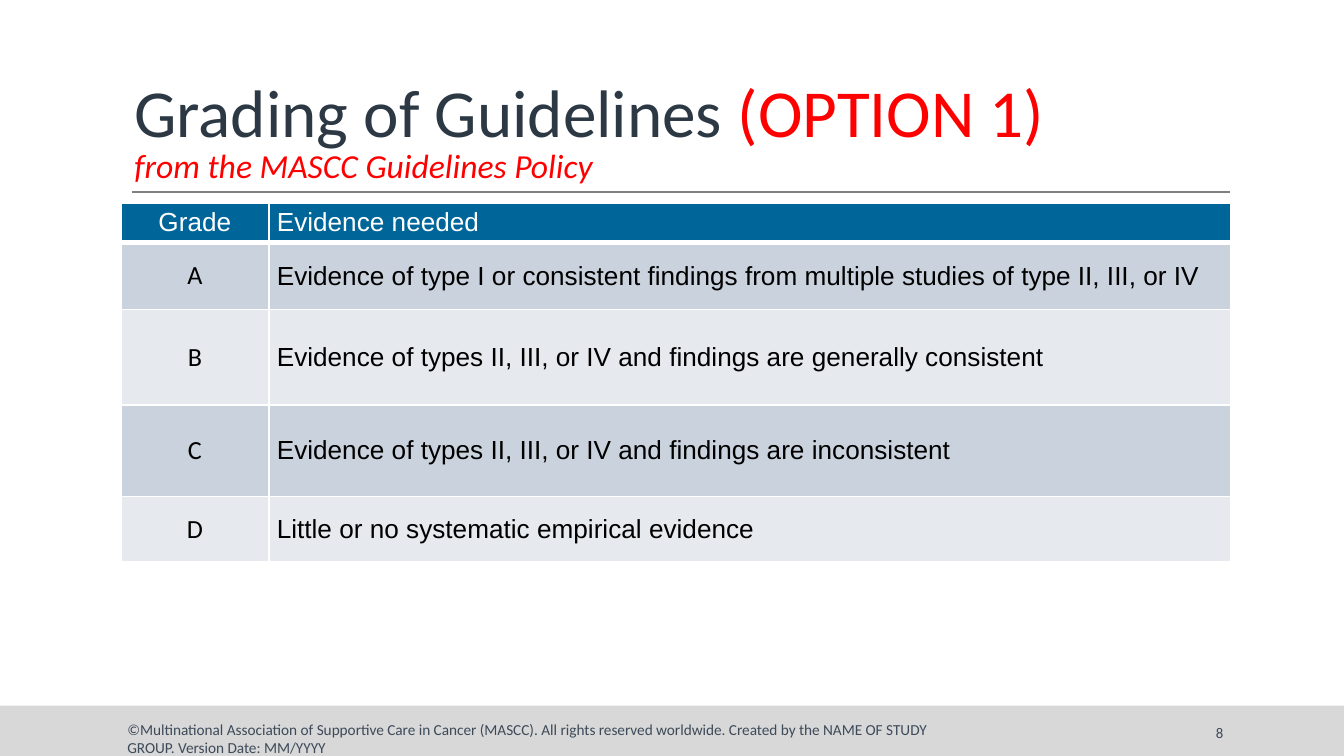
from lxml.etree import SubElement
from pptx import Presentation
from pptx.dml.color import RGBColor
from pptx.enum.shapes import MSO_CONNECTOR, MSO_SHAPE
from pptx.enum.text import MSO_ANCHOR, MSO_AUTO_SIZE, PP_ALIGN
from pptx.oxml.ns import qn
from pptx.util import Inches, Pt


def paint(color, code):
    """Set a fill's or font's colour from a hex string."""
    color.rgb = RGBColor.from_string(code)


def add_run(para, text, size, face, code, italic=None):
    run = para.add_run()
    run.text = text
    run.font.size = Pt(size)
    run.font.name = face
    run.font.italic = italic
    paint(run.font.color, code)


deck = Presentation()
deck.slide_width = Inches(10)
deck.slide_height = deck.slide_width * 9 // 16
slide = deck.slides.add_slide(deck.slide_layouts[5])
shapes = slide.shapes
left, right = Inches(0.9), Inches(9.15)
title = shapes.title

# Footer band and title rule
top = Inches(5.25)
band = shapes.add_shape(MSO_SHAPE.RECTANGLE, 0, top, deck.slide_width,
                        deck.slide_height - top)
band.shadow.inherit = False
band.fill.solid()
paint(band.fill.fore_color, "D8D8D8")
band.line.fill.background()

base = Inches(1.43)
rule = shapes.add_connector(MSO_CONNECTOR.STRAIGHT, Inches(0.98), base, right, base)
rule.line.width = Pt(0.75)
paint(rule.line.color, "7F7F7F")
SubElement(rule._element.spPr, qn("a:effectLst"))

# Title
title.left, title.top = left, Inches(0.24)
title.width, title.height = right - left, base - title.top
frame = title.text_frame
frame.auto_size = MSO_AUTO_SIZE.NONE
frame.vertical_anchor = MSO_ANCHOR.BOTTOM
para = frame.paragraphs[0]
para.alignment = PP_ALIGN.LEFT
para.line_spacing = 0.85
add_run(para, "Grading of Guidelines ", 36, "Calibri", "2C3843")
add_run(para, "(OPTION 1)", 36, "Calibri", "FF0000")
para.add_line_break()
add_run(para, "from the MASCC Guidelines Policy", 18, "Calibri", "FF0000", True)

# Page number and copyright line
notes = [
    (8.12, 5.3, 1.08, MSO_ANCHOR.MIDDLE, PP_ALIGN.RIGHT, 7.9, "8"),
    (0.85, 5.31, 6.5, MSO_ANCHOR.TOP, PP_ALIGN.LEFT, 8.2,
     "©Multinational Association of Supportive Care in Cancer (MASCC). "
     "All rights reserved worldwide. Created by the NAME OF STUDY GROUP. "
     "Version Date: MM/YYYY"),
]
for x, y, width, anchor, align, size, text in notes:
    box = shapes.add_textbox(Inches(x), Inches(y), Inches(width), Inches(0.3))
    frame = box.text_frame
    frame.word_wrap = True
    frame.vertical_anchor = anchor
    para = frame.paragraphs[0]
    para.alignment = align
    add_run(para, text, size, "Calibri", "3D4A59")

# Grades table
rows = [
    (0.29, "Grade", "Evidence needed"),
    (0.5, "A", "Evidence of type I or consistent findings from multiple "
               "studies of type II, III, or IV"),
    (0.71, "B", "Evidence of types II, III, or IV and findings are generally consistent"),
    (0.68, "C", "Evidence of types II, III, or IV and findings are inconsistent"),
    (0.49, "D", "Little or no systematic empirical evidence"),
]
widths = [1.1, 7.16]
high = sum(row[0] for row in rows)
grid = shapes.add_table(len(rows), len(widths), left, Inches(1.51),
                        Inches(sum(widths)), Inches(high)).table
for col, width in zip(grid.columns, widths):
    col.width = Inches(width)

for i, (height, *texts) in enumerate(rows):
    grid.rows[i].height = Inches(height)
    head = i == 0
    shade = "006699" if head else ("E6EAEF", "CAD2DD")[i % 2]
    for j, text in enumerate(texts):
        cell = grid.cell(i, j)
        cell.margin_left = cell.margin_right = Inches(0.06)
        cell.margin_top = cell.margin_bottom = Inches(0.03)
        cell.vertical_anchor = MSO_ANCHOR.MIDDLE
        para = cell.text_frame.paragraphs[0]
        para.alignment = PP_ALIGN.LEFT if j else PP_ALIGN.CENTER
        face = "Arial" if head or j else "Calibri"
        add_run(para, text, 14, face, "FFFFFF" if head else "000000")
        props = cell._tc.get_or_add_tcPr()
        for side in "LRTB":
            thick = (side, i) in (("B", 0), ("T", 1))
            edge = SubElement(props, qn(f"a:ln{side}"), w=str(Pt(3 if thick else 1)))
            SubElement(SubElement(edge, qn("a:solidFill")), qn("a:srgbClr"), val="FFFFFF")
        cell.fill.solid()
        paint(cell.fill.fore_color, shade)

deck.save("out.pptx")
